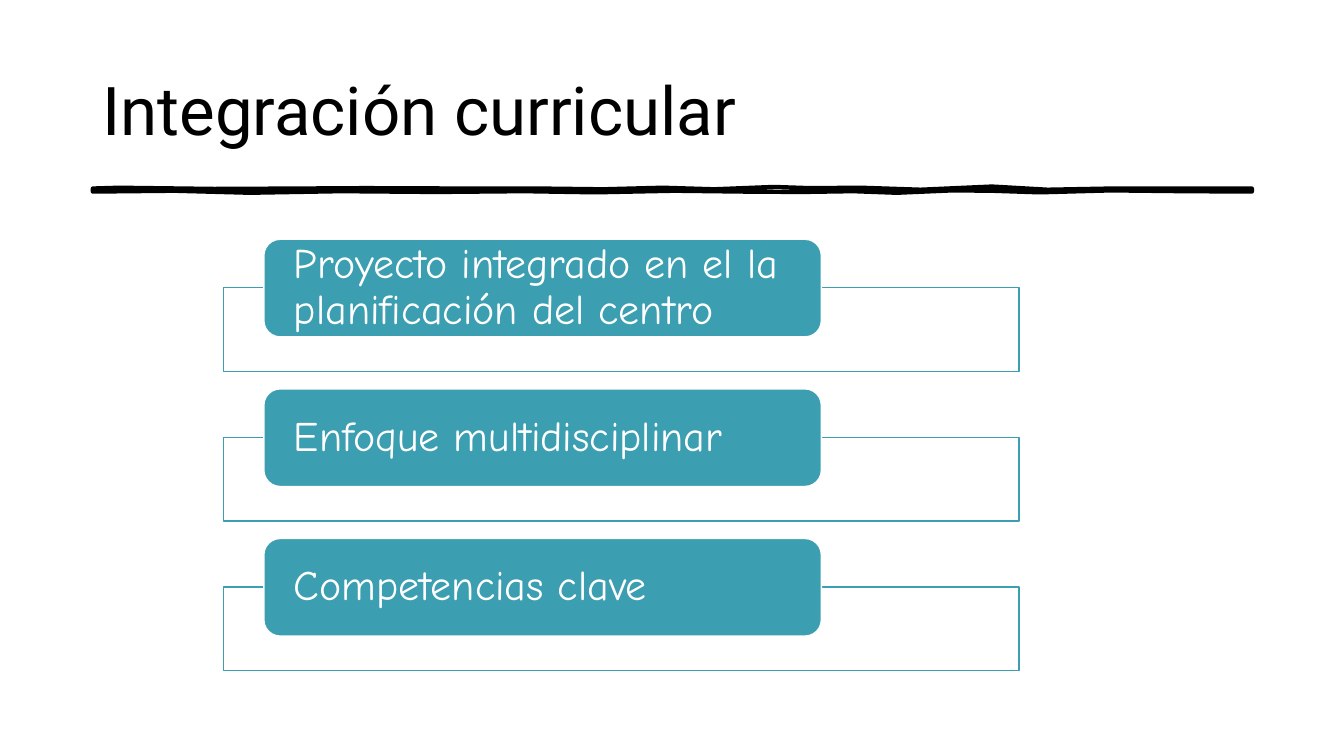
from dataclasses import dataclass

from pptx import Presentation
from pptx.dml.color import RGBColor
from pptx.enum.shapes import MSO_SHAPE as Preset
from pptx.enum.text import MSO_ANCHOR as Anchor, PP_ALIGN as Align
from pptx.shapes.autoshape import Shape
from pptx.slide import Slide
from pptx.util import Cm, Pt

TEAL, WHITE, BLACK = "3B9EB1", "FFFFFF", "000000"
CARD_TOP, CARD_STEP = 6.03, 3.77
FRAME_DROP = 1.22

STROKE_UPPER = [
    (2.34, 4.75), (3, 4.73), (5.4, 4.76), (7.5, 4.75), (9.2, 4.74),
    (11.8, 4.75), (13.6, 4.75), (15.2, 4.77), (16.7, 4.73), (18, 4.77),
    (19.5, 4.71), (20.4, 4.74), (21.7, 4.73), (23.2, 4.78), (25, 4.7),
    (26.4, 4.78), (28, 4.75), (31.55, 4.75),
]
STROKE_LOWER = [
    (31.55, 4.83), (29.8, 4.82), (28, 4.8), (26.2, 4.85), (25, 4.81),
    (24, 4.8), (22.6, 4.86), (21.5, 4.82), (20.2, 4.84), (18.7, 4.83),
    (17, 4.81), (15, 4.85), (13.2, 4.82), (11, 4.84), (8.6, 4.82),
    (6.3, 4.86), (4.4, 4.81), (2.34, 4.83),
]


@dataclass
class Box:
    left: float
    top: float
    width: float
    height: float

    def lengths(self) -> list[Cm]:
        return [Cm(value) for value in (self.left, self.top, self.width, self.height)]


@dataclass
class TextStyle:
    font: str
    size: float
    color: str
    inset: float
    line_spacing: float


TITLE_STYLE = TextStyle("Roboto", 48, BLACK, 0.25, 0.9)
CARD_STYLE = TextStyle("Comic Neue", 30, WHITE, 0.64, 0.9)
CARDS = [
    "Proyecto integrado en el la planificación del centro",
    "Enfoque multidisciplinar",
    "Competencias clave",
]


def color(value: str) -> RGBColor:
    return RGBColor.from_string(value)


def apply(target: object, values: dict[str, object]) -> None:
    for name, value in values.items():
        setattr(target, name, value)


def write(shape: Shape, text: str, style: TextStyle) -> None:
    frame = shape.text_frame
    apply(frame, {
        "word_wrap": True,
        "vertical_anchor": Anchor.MIDDLE,
        "margin_left": Cm(style.inset),
        "margin_right": Cm(style.inset),
        "margin_top": 0,
        "margin_bottom": 0,
    })
    paragraph = frame.paragraphs[0]
    apply(paragraph, {"alignment": Align.LEFT, "line_spacing": style.line_spacing})
    run = paragraph.add_run()
    run.text = text
    apply(run.font, {"name": style.font, "size": Pt(style.size)})
    run.font.color.rgb = color(style.color)


def outline(shape: Shape, line: str, width: float) -> None:
    shape.shadow.inherit = False
    shape.line.color.rgb = color(line)
    shape.line.width = Pt(width)


def add_panel(slide: Slide, preset: Preset, box: Box, fill: str, line: str) -> Shape:
    shape = slide.shapes.add_shape(preset, *box.lengths())
    shape.fill.solid()
    shape.fill.fore_color.rgb = color(fill)
    outline(shape, line, 1)
    return shape


def add_card(slide: Slide, text: str, top: float) -> None:
    frame_box = Box(5.64, top + FRAME_DROP, 20.04, 2.11)
    add_panel(slide, Preset.RECTANGLE, frame_box, WHITE, TEAL)
    label_box = Box(6.65, top, 14.05, 2.46)
    label = add_panel(slide, Preset.ROUNDED_RECTANGLE, label_box, TEAL, WHITE)
    write(label, text, CARD_STYLE)


def add_brush_stroke(slide: Slide) -> None:
    start, *points = [(Cm(x), Cm(y)) for x, y in STROKE_UPPER + STROKE_LOWER]
    builder = slide.shapes.build_freeform(*start)
    builder.add_line_segments(points, close=True)
    stroke = builder.convert_to_shape()
    stroke.fill.background()
    outline(stroke, BLACK, 3)


def main() -> None:
    presentation = Presentation()
    apply(presentation, {"slide_width": Cm(33.87), "slide_height": Cm(19.05)})
    slide = presentation.slides.add_slide(presentation.slide_layouts[6])
    add_brush_stroke(slide)
    title = slide.shapes.add_textbox(*Box(2.33, 1.02, 29.21, 3.68).lengths())
    write(title, "Integración curricular", TITLE_STYLE)
    for index, text in enumerate(CARDS):
        add_card(slide, text, CARD_TOP + index * CARD_STEP)
    presentation.save("out.pptx")


if __name__ == "__main__":
    main()
